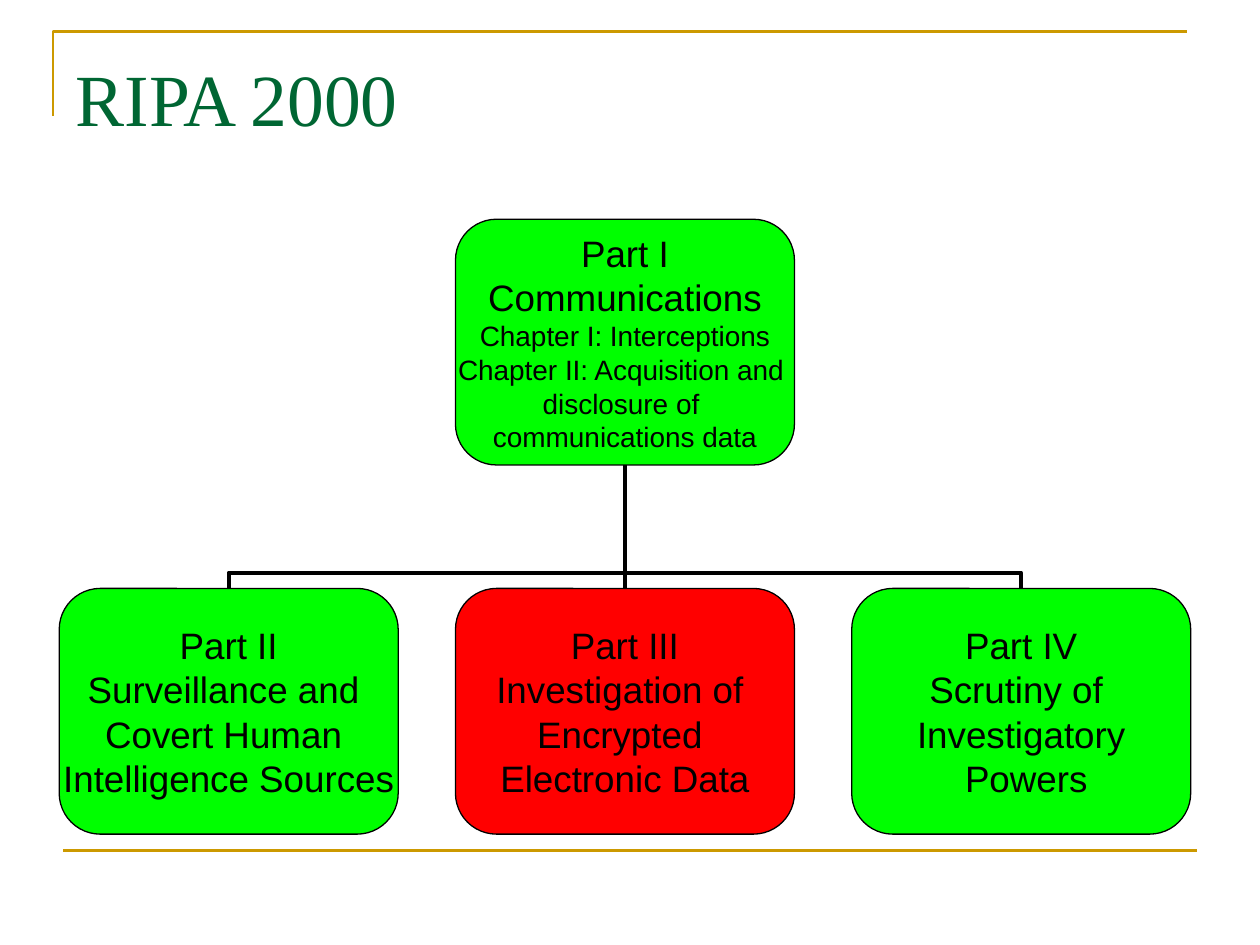
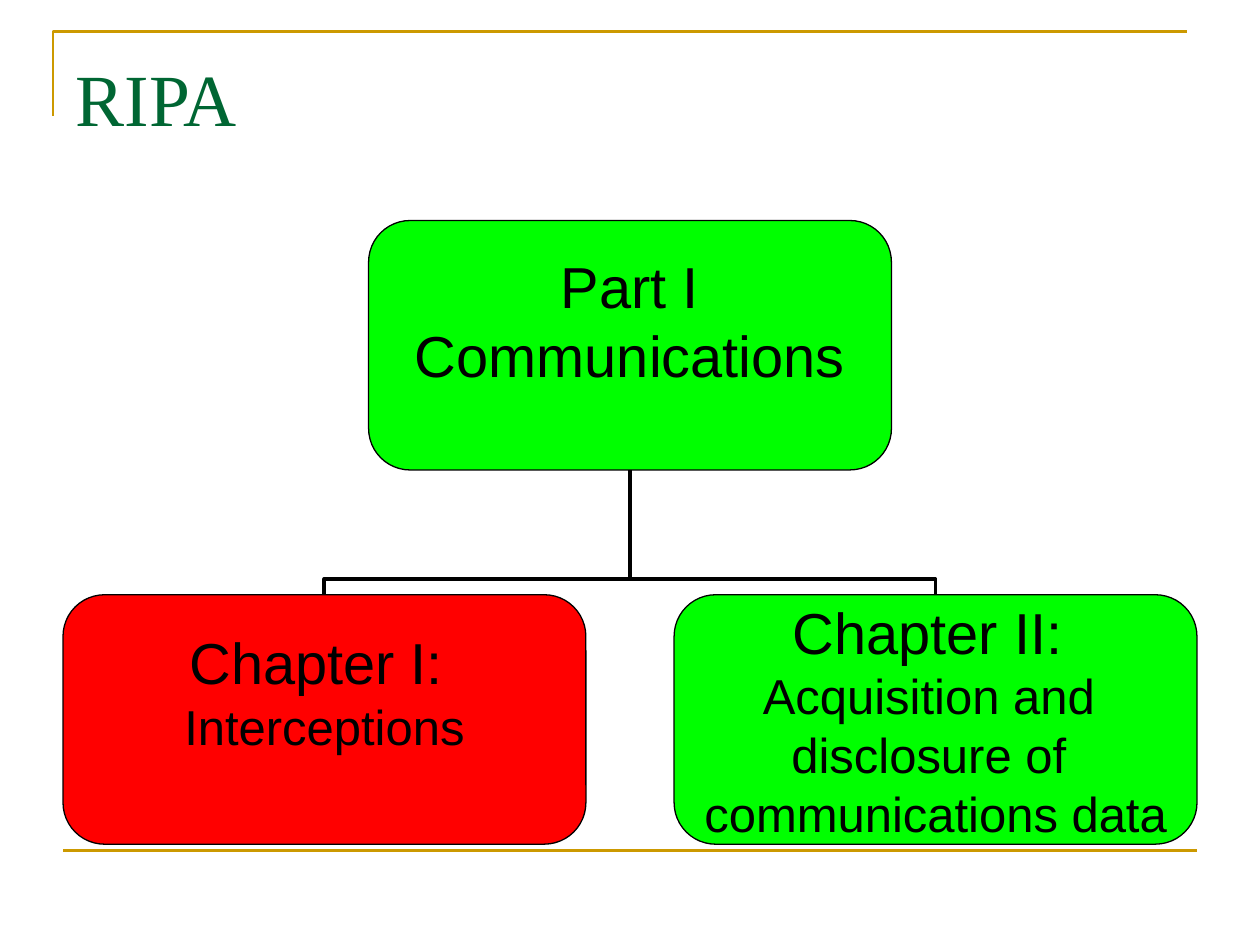
from pptx import Presentation
from pptx.dml.color import RGBColor
from pptx.enum.shapes import MSO_CONNECTOR, MSO_SHAPE
from pptx.enum.text import MSO_ANCHOR, PP_ALIGN
from pptx.oxml.ns import qn
from pptx.util import Inches, Pt
from lxml import etree

ROUND = MSO_SHAPE.ROUNDED_RECTANGLE
LINE, ELBOW = MSO_CONNECTOR.STRAIGHT, MSO_CONNECTOR.ELBOW
TOP, MID = MSO_ANCHOR.TOP, MSO_ANCHOR.MIDDLE
LEFT, MIDDLE = PP_ALIGN.LEFT, PP_ALIGN.CENTER
HUES = {"gold": "CC9900", "title": "006633", "ink": "000000",
        "green": "00FF00", "red": "FF0000"}


def hue(name):
    return RGBColor.from_string(HUES[name])


def link(slide, kind, ends, color, weight):
    line = slide.shapes.add_connector(kind, *[Inches(n) for n in ends])
    line.line.color.rgb = hue(color)
    line.line.width = Pt(weight)
    etree.SubElement(line.element.spPr, qn("a:effectLst"))
    return line


charts = [
    {"title": "RIPA 2000", "left": 0.47, "step": 3.145, "top": 1.74,
     "low": 4.67, "size": (2.69, 1.95), "adj": 12800,
     "root": ("green", 0, [
         (21, ["Part I", "Communications"]),
         (16, ["Chapter I: Interceptions", "Chapter II: Acquisition and ",
               "disclosure of ", "communications data"])]),
     "kids": [
         ("green", 0, [(21, ["Part II", "Surveillance and ", "Covert Human ",
                             "Intelligence Sources"])]),
         ("red", 0, [(21, ["Part III", "Investigation of ", "Encrypted ",
                           "Electronic Data"])]),
         ("green", 0, [(21, ["Part IV", "Scrutiny of ", "Investigatory",
                             " Powers"])])]},
    {"title": "RIPA", "left": 0.5, "step": 4.85, "top": 1.75,
     "low": 4.72, "size": (4.15, 1.98), "adj": 12600,
     "root": ("green", 0.4, [(33, ["Part I", "Communications"])]),
     "kids": [
         ("red", 0.45, [(33, ["Chapter I: "]), (28, ["Interceptions"])]),
         ("green", 0, [(33, ["Chapter II: "]),
                       (28, ["Acquisition and ", "disclosure of ",
                             "communications data"])])]},
]

deck = Presentation()
deck.slide_width, deck.slide_height = Inches(10), Inches(7.5)
layout = deck.slide_layouts[5]
head = layout.placeholders[0]
head.left, head.top = Inches(0.5), Inches(0.3)
head.width, head.height = Inches(9), Inches(1.25)
slides = [deck.slides.add_slide(layout) for chart in charts]

pen = slides[0].shapes.build_freeform(Inches(0.42), Inches(0.92))
pen.add_line_segments([(Inches(0.42), Inches(0.25)),
                       (Inches(9.42), Inches(0.25))], close=False)
frame = pen.convert_to_shape()
frame.shadow.inherit = False
frame.fill.background()
frame.line.color.rgb = hue("gold")
frame.line.width = Pt(1.5)
rule = link(slides[0], LINE, (0.5, 6.75, 9.5, 6.75), "gold", 1.5)
for num, mark in enumerate((frame, rule), 20):
    mark.element.xpath(".//p:cNvPr")[0].set("id", str(num))
    layout.shapes.element.append(mark.element)

for slide, chart in zip(slides, charts):
    title = slide.shapes.title.text_frame
    title.vertical_anchor = TOP
    title.margin_top = Inches(0.12)
    para = title.paragraphs[0]
    para.alignment = LEFT
    run = para.add_run()
    run.text = chart["title"]
    run.font.name, run.font.size = "Times New Roman", Pt(42)
    run.font.color.rgb = hue("title")

    wide, high = chart["size"]
    left, step, top, low = (chart[k] for k in ("left", "step", "top", "low"))
    kids = chart["kids"]
    root = left + step * (len(kids) - 1) / 2
    spots = [(root, top, chart["root"])]
    spots += [(left + i * step, low, kid) for i, kid in enumerate(kids)]

    boxes = []
    for x, y, (fill, pad, parts) in spots:
        box = slide.shapes.add_shape(ROUND, Inches(x), Inches(y),
                                     Inches(wide), Inches(high))
        box.shadow.inherit = False
        box.fill.solid()
        box.fill.fore_color.rgb = hue(fill)
        box.line.color.rgb = hue("ink")
        box.line.width = Pt(0.75)
        text = box.text_frame
        text.word_wrap = False
        text.vertical_anchor = MID
        text.margin_left = text.margin_right = text.margin_top = 0
        text.margin_bottom = Inches(pad)
        rows = [(size, row) for size, group in parts for row in group]
        for i, (size, row) in enumerate(rows):
            para = text.add_paragraph() if i else text.paragraphs[0]
            para.alignment = MIDDLE
            run = para.add_run()
            run.text = row
            run.font.name, run.font.size = "Arial", Pt(size)
            run.font.color.rgb = hue("ink")
        boxes.append(box)

    stem = root + wide / 2
    base = top + high
    drop = low - base
    for (x, y, kid), box in zip(spots[1:], boxes[1:]):
        foot = x + wide / 2
        if abs(foot - stem) < 0.01:
            line = link(slide, LINE, (stem, low, stem, base), "ink", 2.25)
            line.begin_connect(box, 0)
            line.end_connect(boxes[0], 2)
            continue
        span = abs(foot - stem)
        side = 1 if foot > stem else -1
        mid, half = (foot + stem) / 2, side * drop / 2
        level = (low + base) / 2
        line = link(slide, ELBOW, (mid + half, level - span / 2,
                                   mid - half, level + span / 2), "ink", 2.25)
        props = line.element.spPr
        props.find(qn("a:xfrm")).set("rot", str(side * 5400000 % 21600000))
        etree.SubElement(props.find(qn("a:prstGeom")).find(qn("a:avLst")),
                         qn("a:gd"), name="adj1", fmla=f"val {chart['adj']}")

deck.save("out.pptx")
